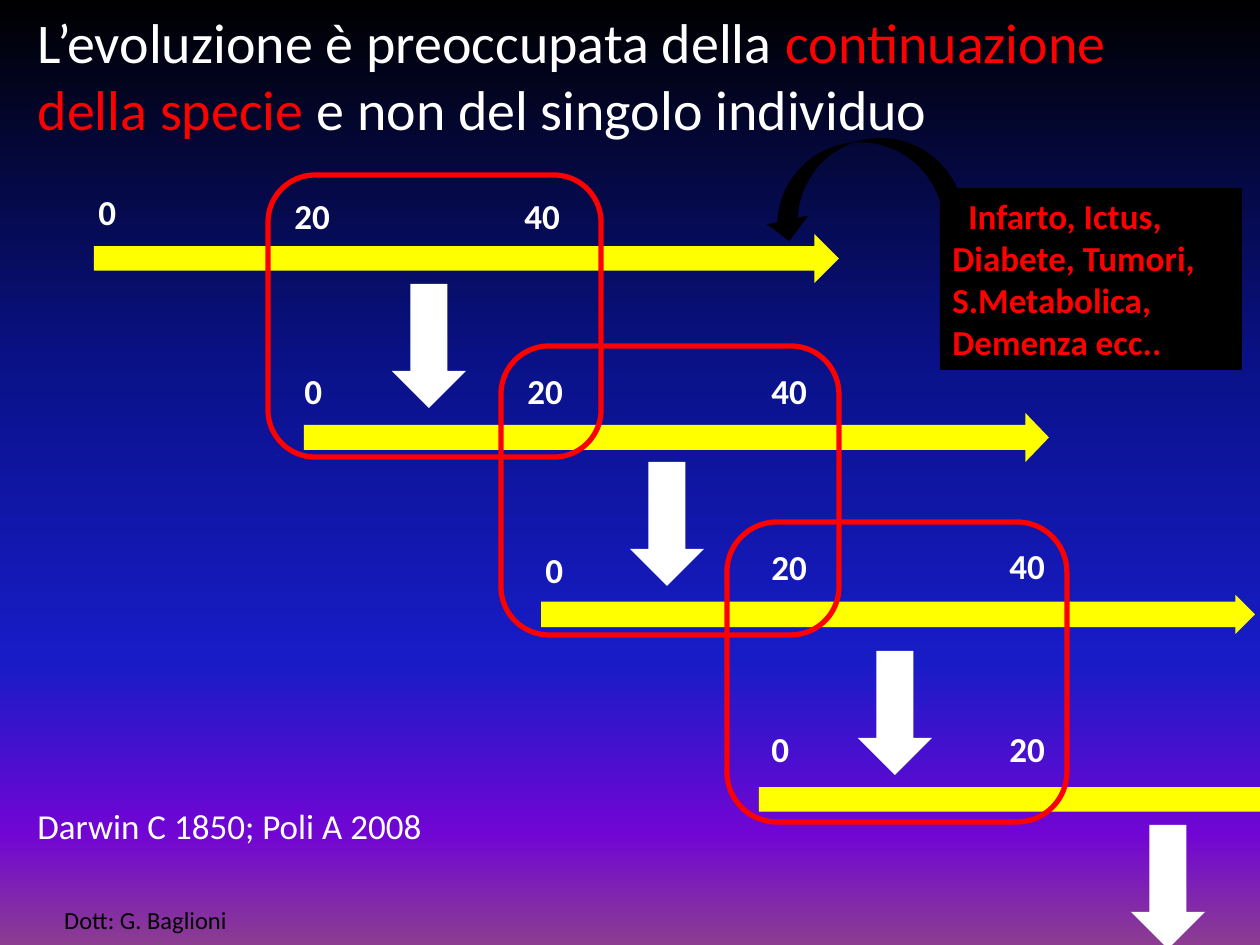
import pptx
import pptx.dml.color
import pptx.enum.dml
import pptx.enum.shapes
import pptx.enum.text
import pptx.oxml
import pptx.oxml.ns
import pptx.util

SHAPE = pptx.enum.shapes.MSO_SHAPE
ANCHOR = pptx.enum.text.MSO_ANCHOR
ALIGN = pptx.enum.text.PP_ALIGN
FONT = "Calibri"
WHITE, RED, YELLOW, BLACK = "FFFFFF", "FF0000", "FFFF00", "000000"
SKY = [(0, BLACK), (40, "0A128C"), (70, "181CC7"), (88, "7005D4"), (100, "8C3D91")]


def px(length):
    return pptx.util.Emu(round(length * 914400 / 126))


def color(hex_string):
    return pptx.dml.color.RGBColor.from_string(hex_string)


def paint_background(slide, stops):
    fill = slide.background.fill
    fill.gradient()
    fill.gradient_angle = 270  # counter-clockwise: top to bottom
    stop_list = fill._fill._gradFill.find(pptx.oxml.ns.qn("a:gsLst"))
    for old_stop in list(stop_list):
        stop_list.remove(old_stop)
    for percent, hex_string in stops:
        stop_list.append(pptx.oxml.parse_xml(
            f'<a:gs {pptx.oxml.ns.nsdecls("a")} pos="{percent * 1000}">'
            f'<a:srgbClr val="{hex_string}"/></a:gs>'))


def write(frame, runs, size, bold=False, align=ALIGN.LEFT, anchor=ANCHOR.TOP):
    """Fill the frame's first paragraph with (text, colour) runs."""
    frame.word_wrap = True
    frame.auto_size = pptx.enum.text.MSO_AUTO_SIZE.NONE
    frame.vertical_anchor = anchor
    paragraph = frame.paragraphs[0]
    paragraph.alignment = align
    for text, hex_string in runs:
        run = paragraph.add_run()
        run.text = text
        run.font.name = FONT
        run.font.size = pptx.util.Pt(size)
        run.font.bold = bold
        run.font.color.rgb = color(hex_string)
    return paragraph


def add_label(slide, box, text, size, hex_string=WHITE, **style):
    label = slide.shapes.add_textbox(*map(px, box))
    write(label.text_frame, [(text, hex_string)], size, **style)


def add_block(slide, kind, box, fill=None, line=None, adjustments=()):
    block = slide.shapes.add_shape(kind, *map(px, box))
    block.shadow.inherit = False
    for index, value in enumerate(adjustments):
        block.adjustments[index] = value
    if fill:
        block.fill.solid()
        block.fill.fore_color.rgb = color(fill)
    else:
        block.fill.background()
    if line:
        block.line.color.rgb = color(line)
        block.line.width = pptx.util.Pt(3)
    else:
        block.line.fill.background()
    return block


def place_title(slide, box):
    title = slide.shapes.title
    title.left, title.top, title.width, title.height = map(px, box)
    write(title.text_frame, [
        ("L’evoluzione è preoccupata della ", WHITE),
        ("continuazione della specie", RED),
        (" e non del singolo individuo", WHITE),
    ], 32)


def add_lifeline(slide, box, adjustments, ages):
    """A life span arrow, with ages offset from its top left corner."""
    left, top = box[:2]
    add_block(slide, SHAPE.RIGHT_ARROW, box, fill=YELLOW, adjustments=adjustments)
    for age, (right, up) in zip(("0", "20", "40"), ages):
        add_label(slide, (left + right, top - up, 80, 55), age, 20, bold=True)


def add_diseases(slide, box):
    left, top = box[:2]
    diseases = add_block(slide, SHAPE.RECTANGLE, box, fill=BLACK)
    paragraph = write(
        diseases.text_frame,
        [("Infarto, Ictus, Diabete, Tumori, S.Metabolica, Demenza ecc..", RED)],
        20, bold=True)
    properties = paragraph._p.get_or_add_pPr()
    properties.set("marL", "0")
    properties.set("indent", str(px(16)))  # first line only
    # Curved arrow back to the end of the first life span
    pointer = add_block(slide, SHAPE.CURVED_UP_ARROW,
                        (left - 182, top - 46, 198, 84), fill=BLACK)
    pointer.rotation = 168.2


def main():
    deck = pptx.Presentation()
    deck.slide_width, deck.slide_height = px(1260), px(945)
    slide = deck.slides.add_slide(deck.slide_layouts[5])
    paint_background(slide, SKY)
    place_title(slide, (25, 1, 1211, 149))

    # Four generations: arrow box, arrow adjustments, age offsets
    generations = [
        ((94, 234, 745, 49), (), [(-8, 50), (188, 46), (418, 46)]),
        ((304, 413, 745, 49), (0.51, 0.48), [(-12, 50), (211, 50), (455, 50)]),
        ((541, 595, 714, 39), (0.65, 0.5), [(-8, 53), (218, 56), (456, 57)]),
        ((759, 775, 745, 49), (), [(0, 54), (238, 54)]),
    ]
    for generation in generations:
        add_lifeline(slide, *generation)

    # Passage from each generation to the next
    for left, top in [(392, 284), (630, 462), (858, 651), (1131, 825)]:
        add_block(slide, SHAPE.DOWN_ARROW, (left, top, 74, 124), fill=WHITE)

    # Fertile years shared by parents and children
    for overlap in [(268, 175, 333, 282), (501, 346, 338, 289), (727, 522, 340, 300)]:
        add_block(slide, SHAPE.ROUNDED_RECTANGLE, overlap, line=RED)

    # Source, diseases of old age and author
    add_label(slide, (25, 798, 586, 55), "Darwin C 1850; Poli A 2008", 20)
    add_diseases(slide, (940, 188, 302, 182))
    add_label(slide, (-54, 895, 399, 50), "Dott: G. Baglioni", 14, BLACK,
              align=ALIGN.CENTER, anchor=ANCHOR.MIDDLE)
    deck.save("out.pptx")


if __name__ == "__main__":
    main()
